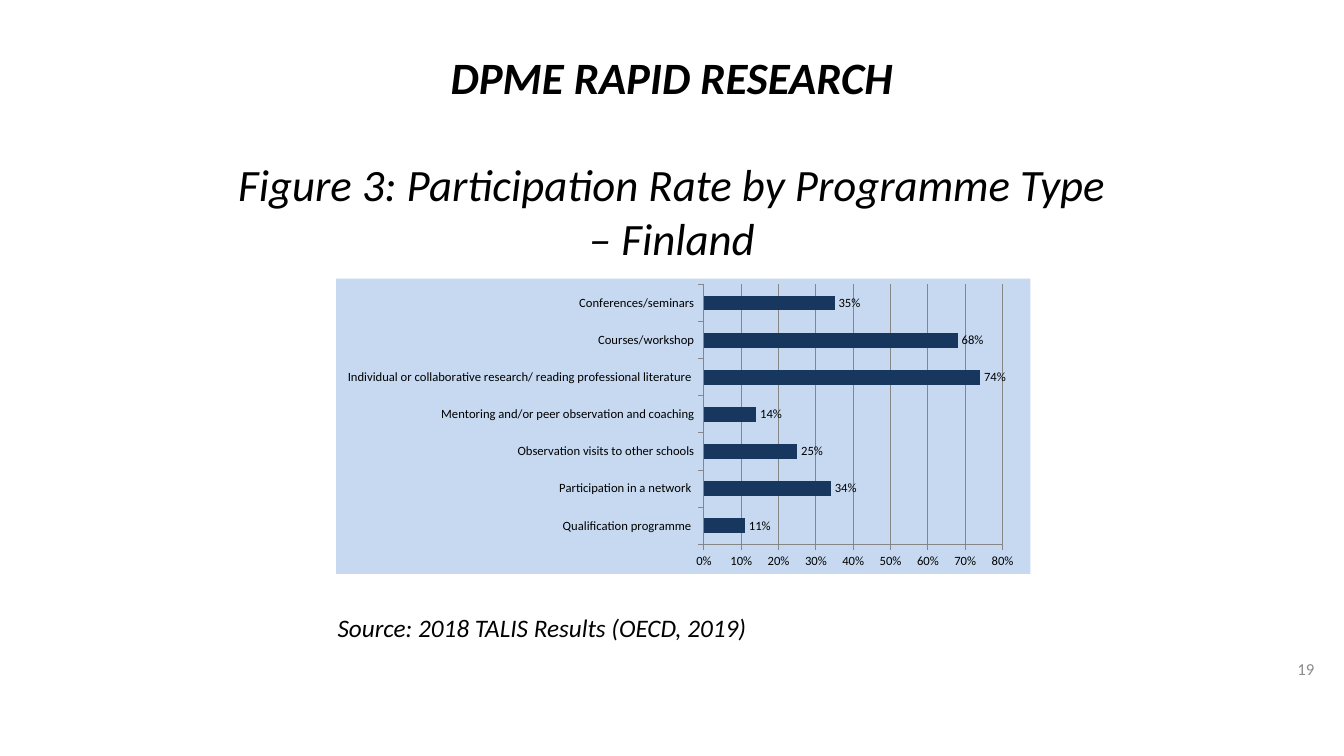
from lxml import etree
from pptx import Presentation
from pptx.chart.data import CategoryChartData
from pptx.dml.color import RGBColor
from pptx.enum.chart import XL_CHART_TYPE, XL_LABEL_POSITION, XL_TICK_MARK
from pptx.enum.text import MSO_ANCHOR, PP_ALIGN
from pptx.oxml import parse_xml
from pptx.oxml.ns import nsdecls, qn
from pptx.util import Pt

FONT = "Calibri"
BLACK, GREY, AXIS = "000000", "8C8C8C", "868686"
PANEL, BAR = "C6D9F1", "17375E"

PARTICIPATION = {
    "Qualification programme ": 0.11,
    "Participation in a network ": 0.34,
    "Observation visits to other schools": 0.25,
    "Mentoring and/or peer observation and coaching": 0.14,
    "Individual or collaborative research/ reading professional literature ": 0.74,
    "Courses/workshop": 0.68,
    "Conferences/seminars": 0.35,
}


def rgb(color):
    return RGBColor.from_string(color)


def add_text_box(slide, left, top, width, height, anchor=MSO_ANCHOR.TOP):
    tf = slide.shapes.add_textbox(Pt(left), Pt(top), Pt(width), Pt(height)).text_frame
    tf.word_wrap = True
    tf.vertical_anchor = anchor
    return tf


def write(p, text, size, color=BLACK, bold=False, italic=False,
          align=PP_ALIGN.LEFT, before=0):
    p.alignment = align
    if before:
        p.space_before = Pt(before)
    r = p.add_run()
    r.text = text
    font = r.font
    font.name, font.size, font.bold, font.italic = FONT, Pt(size), bold, italic
    font.color.rgb = rgb(color)


def fill_panel(chart, color):
    """Fill the whole chart area, without a border."""
    panel = parse_xml(
        f'<c:spPr {nsdecls("c", "a")}><a:solidFill><a:srgbClr val="{color}"/>'
        '</a:solidFill><a:ln><a:noFill/></a:ln></c:spPr>')
    chart.element.find(qn("c:chart")).addnext(panel)


def place_plot(chart, **fractions):
    """Fix the inner plot area as x, y, w, h fractions of the chart."""
    plot_area = chart.element.find(qn("c:chart")).find(qn("c:plotArea"))
    for old in plot_area.findall(qn("c:layout")):
        plot_area.remove(old)
    layout = etree.Element(qn("c:layout"))
    manual = etree.SubElement(layout, qn("c:manualLayout"))
    settings = {"layoutTarget": "inner", "xMode": "edge", "yMode": "edge", **fractions}
    for name, value in settings.items():
        etree.SubElement(manual, qn(f"c:{name}")).set("val", str(value))
    plot_area.insert(0, layout)


def style_axis(axis):
    axis.major_tick_mark = XL_TICK_MARK.OUTSIDE
    axis.minor_tick_mark = XL_TICK_MARK.NONE
    axis.format.line.color.rgb = rgb(AXIS)
    axis.format.line.width = Pt(0.75)


def add_bar_chart(slide, left, top, width, height, rates):
    data = CategoryChartData(number_format="0%")
    data.categories = list(rates)
    data.add_series("Series 1", list(rates.values()))
    chart = slide.shapes.add_chart(XL_CHART_TYPE.BAR_CLUSTERED, Pt(left), Pt(top),
                                   Pt(width), Pt(height), data).chart
    chart.has_legend = False
    chart.has_title = False
    chart.font.name, chart.font.size = FONT, Pt(9)
    chart.font.color.rgb = rgb(BLACK)
    fill_panel(chart, PANEL)
    place_plot(chart, x=0.53, y=0.02, w=0.43, h=0.88)

    axis = chart.value_axis
    axis.minimum_scale, axis.maximum_scale, axis.major_unit = 0, 0.8, 0.1
    axis.tick_labels.number_format = "0%"
    axis.tick_labels.number_format_is_linked = False
    axis.has_major_gridlines = True
    axis.major_gridlines.format.line.color.rgb = rgb(AXIS)
    axis.major_gridlines.format.line.width = Pt(0.75)
    style_axis(axis)
    style_axis(chart.category_axis)

    plot = chart.plots[0]
    plot.gap_width = 150
    plot.vary_by_categories = False
    fill = plot.series[0].format.fill
    fill.solid()
    fill.fore_color.rgb = rgb(BAR)
    plot.has_data_labels = True
    labels = plot.data_labels
    labels.show_value = True
    labels.number_format = "0%"
    labels.number_format_is_linked = False
    labels.position = XL_LABEL_POSITION.OUTSIDE_END


def main():
    prs = Presentation()
    prs.slide_width, prs.slide_height = Pt(960), Pt(540)
    s = prs.slides.add_slide(prs.slide_layouts[6])

    title = add_text_box(s, 156, 32, 648, 163)
    write(title.paragraphs[0], "DPME RAPID RESEARCH", 32, bold=True, italic=True,
          align=PP_ALIGN.CENTER)
    write(title.add_paragraph(), "Figure 3: Participation Rate by Programme Type – Finland",
          32, italic=True, align=PP_ALIGN.CENTER, before=38)

    add_bar_chart(s, 240, 199, 496, 211, PARTICIPATION)

    source = add_text_box(s, 234, 434, 480, 29)
    write(source.paragraphs[0], "Source: 2018 TALIS Results (OECD, 2019)", 18, italic=True)

    number = add_text_box(s, 722, 463, 224, 29, MSO_ANCHOR.MIDDLE)
    write(number.paragraphs[0], "19", 12, GREY, align=PP_ALIGN.RIGHT)

    prs.save("out.pptx")


if __name__ == "__main__":
    main()
